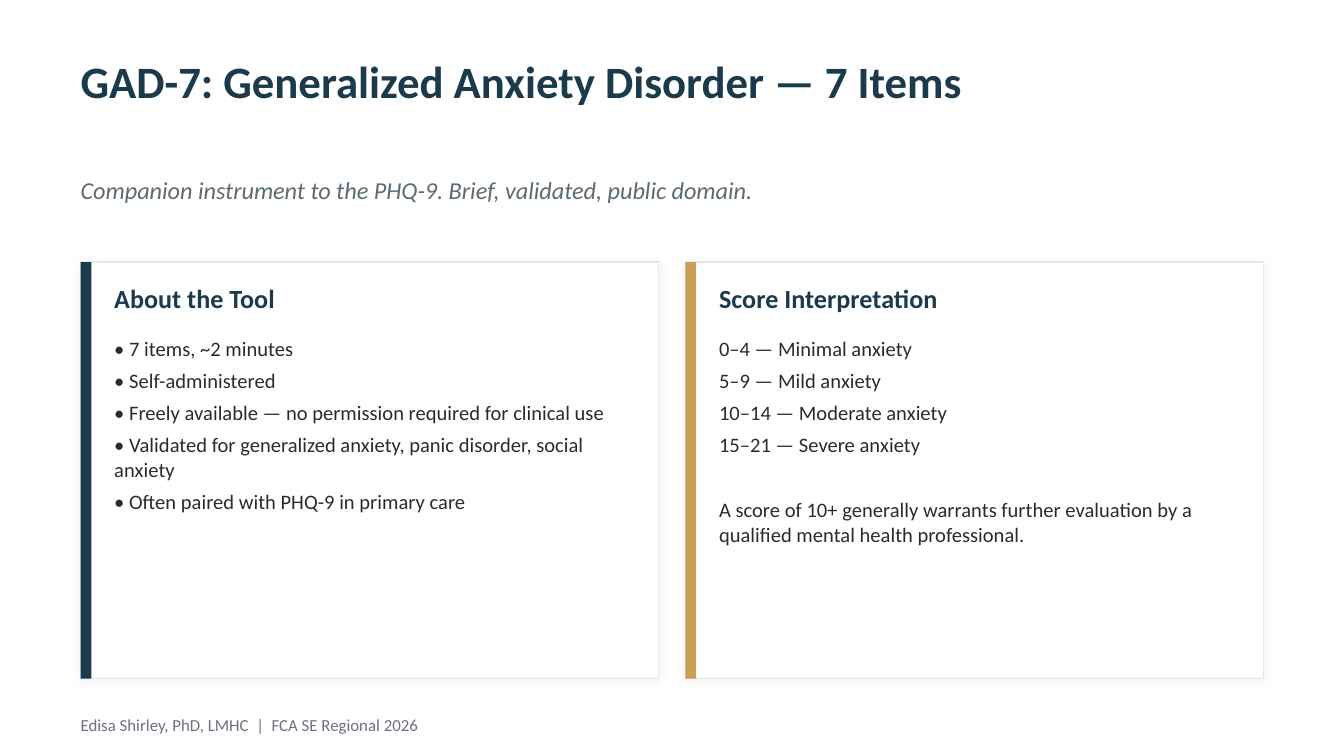
"""Build the GAD-7 overview slide with two accent cards."""
from lxml.etree import SubElement
from pptx import Presentation
from pptx.dml.color import RGBColor
from pptx.enum.shapes import MSO_SHAPE
from pptx.enum.text import MSO_ANCHOR, MSO_AUTO_SIZE, PP_ALIGN
from pptx.oxml.ns import qn
from pptx.util import Inches, Pt

TITLE = "GAD-7: Generalized Anxiety Disorder — 7 Items"
SUBTITLE = "Companion instrument to the PHQ-9. Brief, validated, public domain."
FOOTER = "Edisa Shirley, PhD, LMHC  |  FCA SE Regional 2026"
CARDS = [
    {
        "heading": "About the Tool",
        "accent": "navy",
        "lines": [
            "• 7 items, ~2 minutes",
            "• Self-administered",
            "• Freely available — no permission required for clinical use",
            "• Validated for generalized anxiety, panic disorder, social anxiety",
            "• Often paired with PHQ-9 in primary care",
        ],
    },
    {
        "heading": "Score Interpretation",
        "accent": "gold",
        "lines": [
            "0–4 — Minimal anxiety",
            "5–9 — Mild anxiety",
            "10–14 — Moderate anxiety",
            "15–21 — Severe anxiety",
        ],
        "note": "A score of 10+ generally warrants further evaluation "
                "by a qualified mental health professional.",
    },
]

THEME = {
    "font": "Calibri",
    "colors": {"navy": "1B3A4B", "gold": "C8A157", "slate": "5C6B73", "gray": "6B7280",
               "ink": "2B2B2B", "white": "FFFFFF", "border": "E5E7EB"},
    "styles": {
        "title": {"size": 24, "color": "navy", "bold": True},
        "subtitle": {"size": 13, "color": "slate", "italic": True},
        "heading": {"size": 14, "color": "navy", "bold": True},
        "body": {"size": 11, "color": "ink"},
        "footer": {"size": 9, "color": "gray"},
    },
}
LEFT, CARD_TOP, CARD_WIDTH, CARD_HEIGHT, CARD_GAP = 0.6, 1.95, 4.3, 3.1, 0.2
BAR_WIDTH, TEXT_INSET, TEXT_WIDTH = 0.08, 0.25, 3.9
LINE_GAP, NOTE_GAP = 4, 17.4


def color(name):
    return RGBColor.from_string(THEME["colors"][name])


def place(page, box, left, top, width, height):
    box.left, box.top, box.width, box.height = map(Inches, (left, top, width, height))
    page.shapes._spTree.append(box._element)
    frame = box.text_frame
    frame.margin_left = frame.margin_top = frame.margin_right = frame.margin_bottom = 0
    frame.word_wrap = True
    frame.auto_size = MSO_AUTO_SIZE.NONE
    frame.vertical_anchor = MSO_ANCHOR.TOP
    return frame


def write(paragraph, text, style_name, before=0, after=0):
    style = THEME["styles"][style_name]
    properties = paragraph._p.get_or_add_pPr()
    properties.set("marL", "0")
    properties.set("indent", "0")
    SubElement(properties, qn("a:buNone"))
    paragraph.alignment = PP_ALIGN.LEFT
    paragraph.space_before, paragraph.space_after = Pt(before), Pt(after)
    span = paragraph.add_run()
    span.text = text
    span.font.name = THEME["font"]
    span.font.size = Pt(style["size"])
    span.font.bold = style.get("bold", False)
    span.font.italic = style.get("italic", False)
    span.font.color.rgb = color(style["color"])


def add_panel(page, left, width, fill, border=None):
    panel = page.shapes.add_shape(MSO_SHAPE.RECTANGLE, Inches(left), Inches(CARD_TOP),
                                  Inches(width), Inches(CARD_HEIGHT))
    panel.fill.solid()
    panel.fill.fore_color.rgb = color(fill)
    panel.shadow.inherit = False
    if border:
        panel.line.color.rgb = color(border)
        panel.line.width = Pt(0.75)
    else:
        panel.line.fill.background()
    return panel


def add_soft_shadow(panel):
    effects = panel._element.spPr.find(qn("a:effectLst"))
    shadow = SubElement(effects, qn("a:outerShdw"), blurRad=str(Pt(6)), dist=str(Pt(1)),
                        dir="5400000", algn="t", rotWithShape="0")
    tint = SubElement(shadow, qn("a:srgbClr"), val="000000")
    SubElement(tint, qn("a:alpha"), val="5000")


def add_card(page, card, left, heading_box, list_box):
    add_soft_shadow(add_panel(page, left, CARD_WIDTH, "white", "border"))
    add_panel(page, left, BAR_WIDTH, card["accent"])
    text_left = left + TEXT_INSET
    heading = place(page, heading_box, text_left, CARD_TOP + 0.15, TEXT_WIDTH, 0.35)
    write(heading.paragraphs[0], card["heading"], "heading")
    frame = place(page, list_box, text_left, CARD_TOP + 0.55, TEXT_WIDTH, 2.4)
    for number, line in enumerate(card["lines"]):
        paragraph = frame.add_paragraph() if number else frame.paragraphs[0]
        write(paragraph, line, "body", after=LINE_GAP)
    if "note" in card:
        write(frame.add_paragraph(), card["note"], "body", before=NOTE_GAP, after=LINE_GAP)


def main():
    deck = Presentation()
    deck.slide_width = Inches(10)
    deck.slide_height = deck.slide_width * 9 // 16
    page = deck.slides.add_slide(deck.slide_layouts.get_by_name("Comparison"))
    title, *card_boxes = page.placeholders

    frame = place(page, title, LEFT, 0.4, 8.8, 0.55)
    write(frame.paragraphs[0], TITLE, "title")
    for text, style, top, width, height in (
        (FOOTER, "footer", 5.32, 8.8, 0.25),
        (SUBTITLE, "subtitle", 1.3, 8.85, 0.45),
    ):
        box = page.shapes.add_textbox(0, 0, 0, 0)
        write(place(page, box, LEFT, top, width, height).paragraphs[0], text, style)

    for number, card in enumerate(CARDS):
        left = LEFT + number * (CARD_WIDTH + CARD_GAP)
        add_card(page, card, left, *card_boxes[2 * number:2 * number + 2])
    deck.save("out.pptx")


if __name__ == "__main__":
    main()
